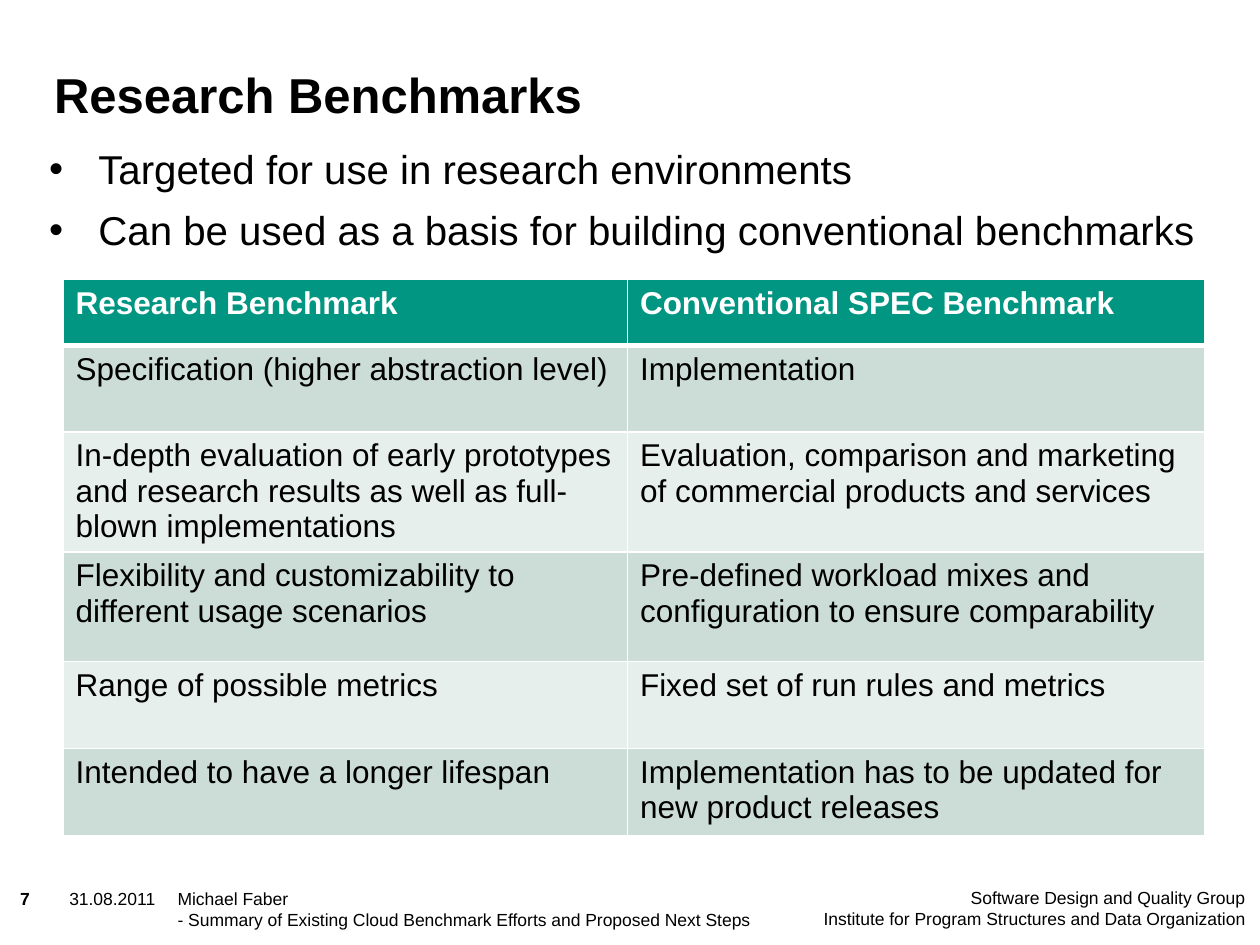
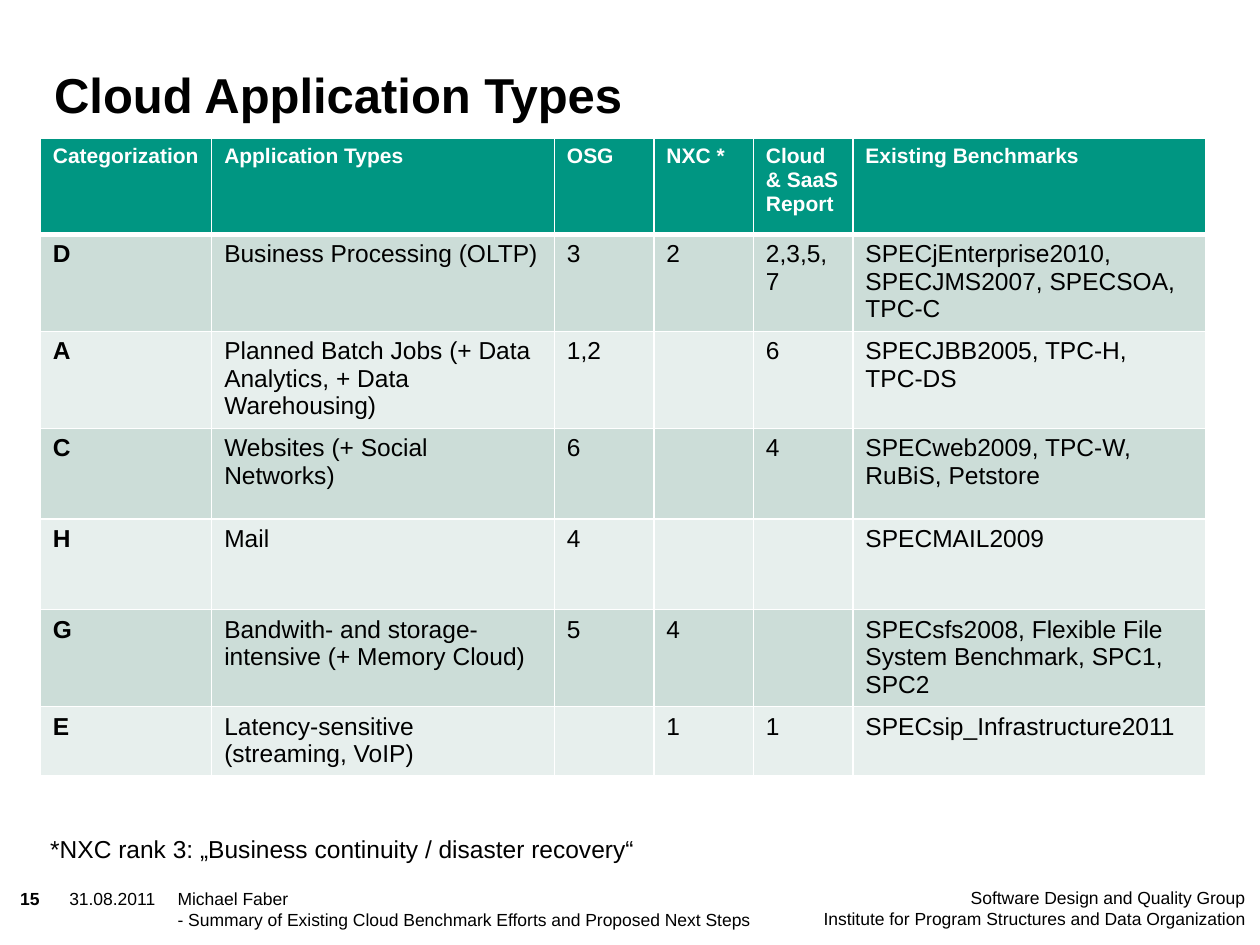
from lxml.etree import SubElement
from pptx import Presentation
from pptx.dml.color import RGBColor
from pptx.enum.text import MSO_ANCHOR, PP_ALIGN
from pptx.oxml import parse_xml
from pptx.oxml.ns import nsdecls, qn
from pptx.util import Inches, Pt

# Shared style: the slide is a grid of 100 columns by 75 rows
COLORS = {"text": "000000", "paper": "FFFFFF", "header": "009682",
          "odd": "CCDDD8", "even": "E7EFED"}
FONT = "Arial"
COLUMNS, ROWS = 100, 75


def write(frame, text, size=10, color="text", bold=False,
          align=PP_ALIGN.LEFT, gap=0, bullet=None):
    """Fill a text frame, one paragraph for each line of text."""
    for index, line in enumerate(text.split("\n")):
        para = frame.paragraphs[0] if index == 0 else frame.add_paragraph()
        para.alignment = align
        para.space_before = Pt(gap if index else 0)
        if bullet:
            props = para._p.get_or_add_pPr()
            indent = Inches(0.39)
            props.set("marL", str(indent))
            props.set("indent", str(-indent))
            SubElement(props, qn("a:buFont"), typeface=FONT)
            SubElement(props, qn("a:buChar"), char=bullet)
        span = para.add_run()
        span.text = line
        span.font.name = FONT
        span.font.size = Pt(size)
        span.font.bold = bold
        span.font.color.rgb = RGBColor.from_string(COLORS[color])


class BenchmarkDeck:
    def __init__(self):
        self.deck = Presentation()
        self.deck.slide_width, self.deck.slide_height = Inches(10), Inches(7.5)
        self.page = None

    def across(self, columns):
        return round(self.deck.slide_width * columns / COLUMNS)

    def down(self, rows):
        return round(self.deck.slide_height * rows / ROWS)

    def place(self, left, top, width, height):
        return (self.across(left), self.down(top),
                self.across(width), self.down(height))

    def text(self, area, text, anchor=MSO_ANCHOR.TOP, inset=0, **style):
        frame = self.page.shapes.add_textbox(*self.place(*area)).text_frame
        frame.word_wrap = True
        frame.vertical_anchor = anchor
        frame.margin_left = frame.margin_right = Inches(inset)
        frame.margin_top = frame.margin_bottom = Inches(inset / 2)
        write(frame, text, **style)

    def start_page(self, number, title):
        self.page = self.deck.slides.add_slide(self.deck.slide_layouts[6])
        # Title
        self.text((4.3, 3.6, 75.6, 6.2), title, anchor=MSO_ANCHOR.BOTTOM,
                  size=28, bold=True)
        # Footer
        self.text((1.6, 70.5, 3.6, 2.4), number, bold=True)
        self.text((5.5, 70.5, 8, 3.9), "31.08.2011")
        self.text((14.1, 70.5, 49.7, 3.9), "Michael Faber\n"
                  "- Summary of Existing Cloud Benchmark Efforts and Proposed Next Steps")
        self.text((64, 70.4, 34.8, 3.9), "Software Design and Quality Group\n"
                  "Institute for Program Structures and Data Organization",
                  align=PP_ALIGN.RIGHT)

    def bullets(self, area, text, **style):
        self.text(area, text, bullet="•", **style)

    def borders(self, cell, **widths):
        props = cell._tc.get_or_add_tcPr()
        for index, side in enumerate("LRTB"):
            width = Pt(widths.get(side, 1))
            props.insert(index, parse_xml(
                f'<a:ln{side} {nsdecls("a")} w="{width}"><a:solidFill>'
                f'<a:srgbClr val="{COLORS["paper"]}"/></a:solidFill></a:ln{side}>'))

    def table(self, left, top, widths, heights, records,
              header_size, size, bold_first=False):
        area = self.place(left, top, sum(widths), sum(heights))
        table = self.page.shapes.add_table(len(records), len(widths), *area).table
        table.horz_banding = False
        for column, width in zip(table.columns, widths):
            column.width = self.across(width)
        for row, height in zip(table.rows, heights):
            row.height = self.down(height)
        for r, record in enumerate(records):
            header = r == 0
            fill = "header" if header else "odd" if r % 2 else "even"
            for c, text in enumerate(record):
                cell = table.cell(r, c)
                cell.margin_bottom = 0
                cell.fill.solid()
                cell.fill.fore_color.rgb = RGBColor.from_string(COLORS[fill])
                self.borders(cell, B=3 if header else 1, T=3 if r == 1 else 1)
                if text:
                    write(cell.text_frame, text,
                          size=header_size if header else size,
                          color="paper" if header else "text",
                          bold=header or (bold_first and c == 0))


def research_benchmarks(deck):
    deck.start_page("7", "Research Benchmarks")
    deck.bullets((3.9, 11.45, 93.2, 9),
                 "Targeted for use in research environments\n"
                 "Can be used as a basis for building conventional benchmarks",
                 size=23, gap=7.5)
    deck.table(5, 22.2, [44.8, 45.8], [5.2, 6.9, 6.9, 8.7, 6.9, 6.9], [
        ("Research Benchmark", "Conventional SPEC Benchmark"),
        ("Specification (higher abstraction level)", "Implementation"),
        ("In-depth evaluation of early prototypes and research results "
         "as well as full-blown implementations",
         "Evaluation, comparison and marketing of commercial products and services"),
        ("Flexibility and customizability to different usage scenarios",
         "Pre-defined workload mixes and configuration to ensure comparability"),
        ("Range of possible metrics", "Fixed set of run rules and metrics"),
        ("Intended to have a longer lifespan",
         "Implementation has to be updated for new product releases"),
    ], header_size=18, size=18)


def application_types(deck):
    deck.start_page("15", "Cloud Application Types")
    deck.table(3.2, 11, [13.6, 27.2] + [7.9] * 3 + [28],
               [7.6, 7.7, 7.7, 7.2, 7.2, 7.7, 5.5], [
        ("Categorization", "Application Types", "OSG", "NXC *",
         "Cloud & SaaS Report", "Existing Benchmarks"),
        ("D", "Business Processing (OLTP)", "3", "2", "2,3,5,7",
         "SPECjEnterprise2010, SPECJMS2007, SPECSOA, TPC-C"),
        ("A", "Planned Batch Jobs (+ Data Analytics, + Data Warehousing)",
         "1,2", "", "6", "SPECJBB2005, TPC-H,\nTPC-DS"),
        ("C", "Websites (+ Social Networks)", "6", "", "4",
         "SPECweb2009, TPC-W, RuBiS, Petstore"),
        ("H", "Mail", "4", "", "", "SPECMAIL2009"),
        ("G", "Bandwith- and storage-intensive (+ Memory Cloud)", "5", "4", "",
         "SPECsfs2008, Flexible File System Benchmark, SPC1, SPC2"),
        ("E", "Latency-sensitive (streaming, VoIP)", "", "1", "1",
         "SPECsip_Infrastructure2011"),
    ], header_size=12, size=14, bold_first=True)
    # Footnote to the ranking column
    deck.text((3, 65.7, 54, 3.4),
              "*NXC rank 3: „Business continuity / disaster recovery“",
              inset=0.1, size=14)


def main():
    benchmark_deck = BenchmarkDeck()
    research_benchmarks(benchmark_deck)
    application_types(benchmark_deck)
    benchmark_deck.deck.save("out.pptx")


if __name__ == "__main__":
    main()
